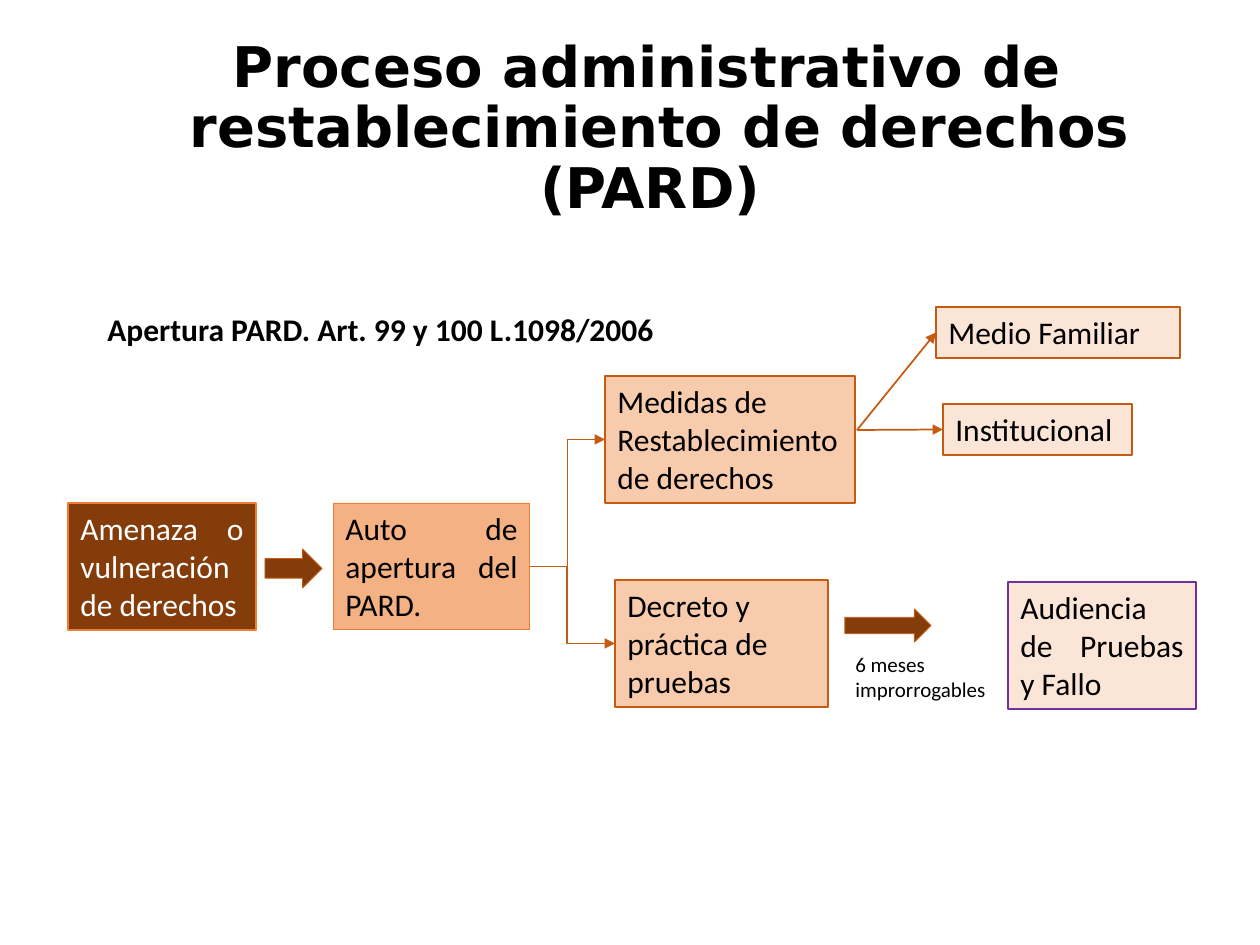
from dataclasses import dataclass

from lxml import etree
from pptx import Presentation
from pptx.dml.color import RGBColor
from pptx.enum.shapes import MSO_CONNECTOR, MSO_SHAPE
from pptx.enum.text import MSO_ANCHOR, PP_ALIGN
from pptx.oxml.ns import qn
from pptx.util import Pt

PX = 914400 / 126
RECT, ARROW = MSO_SHAPE.RECTANGLE, MSO_SHAPE.RIGHT_ARROW
STRAIGHT, ELBOW = MSO_CONNECTOR.STRAIGHT, MSO_CONNECTOR.ELBOW
LEFT, CENTER, JUSTIFY = PP_ALIGN.LEFT, PP_ALIGN.CENTER, PP_ALIGN.JUSTIFY
LEFT_SIDE, RIGHT_SIDE = 1, 3


@dataclass(frozen=True)
class Theme:
    body_font: str = "Calibri"
    title_font: str = "DejaVu Sans"
    title: int = 32
    body: int = 18
    note: int = 12
    black: str = "000000"
    white: str = "FFFFFF"
    brown: str = "843C0B"
    orange: str = "ED7D31"
    rust: str = "C55A11"
    tan: str = "F4B183"
    peach: str = "F8CBAD"
    cream: str = "FBE5D6"
    purple: str = "7030A0"
    thin: float = 0.5
    line: float = 1


THEME = Theme()

TITLE = "Proceso administrativo de restablecimiento de derechos (PARD) "
HEADING = "Apertura PARD. Art. 99 y 100 L.1098/2006"
DEADLINE = "6 meses\nimprorrogables"

# name: (text, (left, top, width, height), fill, line, line width, text colour, alignment)
STEPS = {
    "threat": ("Amenaza o vulneración de derechos", (68, 503, 188, 127),
               THEME.brown, THEME.orange, THEME.line, THEME.white, JUSTIFY),
    "opening": ("Auto de apertura del PARD.", (333, 503, 197, 127),
                THEME.tan, THEME.orange, THEME.thin, THEME.black, JUSTIFY),
    "measures": ("Medidas de Restablecimiento de derechos", (605, 376, 250, 127),
                 THEME.peach, THEME.rust, THEME.line, THEME.black, LEFT),
    "evidence": ("Decreto y práctica de pruebas", (615, 580, 213, 127),
                 THEME.peach, THEME.rust, THEME.line, THEME.black, LEFT),
    "institution": ("Institucional", (943, 404, 189, 51),
                    THEME.cream, THEME.rust, THEME.line, THEME.black, JUSTIFY),
    "family": ("Medio Familiar", (936, 307, 244, 51),
               THEME.cream, THEME.rust, THEME.line, THEME.black, JUSTIFY),
    "hearing": ("Audiencia de Pruebas y Fallo", (1008, 582, 188, 127),
                THEME.cream, THEME.purple, THEME.line, THEME.black, JUSTIFY),
}
BLOCK_ARROWS = [(265, 549, 57, 39), (845, 609, 86, 33)]
FORK = (857, 430)
BRANCH = (567, 566)


def px(value):
    return round(value * PX)


def rgb(code):
    return RGBColor.from_string(code)


def write(box, text, size, color=THEME.black, align=LEFT, bold=False, font=THEME.body_font):
    frame = box.text_frame
    frame.word_wrap = True
    frame.text = text
    for para in frame.paragraphs:
        para.alignment = align
        for span in para.runs:
            span.font.name = font
            span.font.size = Pt(size)
            span.font.bold = bold
            span.font.color.rgb = rgb(color)
    return frame


def add_label(page, place, text, size, **style):
    box = page.shapes.add_textbox(*map(px, place))
    return write(box, text, size, **style)


def add_block(page, kind, place, fill, line, width):
    block = page.shapes.add_shape(kind, *map(px, place))
    block.shadow.inherit = False
    block.fill.solid()
    block.fill.fore_color.rgb = rgb(fill)
    block.line.color.rgb = rgb(line)
    block.line.width = Pt(width)
    return block


def add_link(page, kind, start, target):
    """Draw an arrow from a point to the middle of the target's left side."""
    link = page.shapes.add_connector(kind, *map(px, start), 0, 0)
    link.end_connect(target, LEFT_SIDE)
    link.line.color.rgb = rgb(THEME.rust)
    link.line.width = Pt(THEME.line)
    etree.SubElement(link.line._get_or_add_ln(), qn("a:tailEnd"), type="triangle")
    etree.SubElement(link._element.spPr, qn("a:effectLst"))
    return link


def make_single_bend(link):
    """Turn an elbow into one that runs down first and then right."""
    left, top, width, height = link.left, link.top, link.width, link.height
    link.left = left + (width - height) // 2
    link.top = top + (height - width) // 2
    link.width, link.height = height, width
    properties = link._element.spPr
    properties.find(qn("a:prstGeom")).set("prst", "bentConnector2")
    transform = properties.find(qn("a:xfrm"))
    transform.set("rot", str(270 * 60000))
    transform.set("flipH", "1")


def main():
    deck = Presentation()
    deck.slide_width, deck.slide_height = px(1260), px(945)
    page = deck.slides.add_slide(deck.slide_layouts[6])

    steps = {}
    for name, (text, place, fill, line, width, color, align) in STEPS.items():
        steps[name] = add_block(page, RECT, place, fill, line, width)
        frame = write(steps[name], text, THEME.body, color, align)
        frame.vertical_anchor = MSO_ANCHOR.TOP

    for place in BLOCK_ARROWS:
        add_block(page, ARROW, place, THEME.brown, THEME.rust, THEME.thin)

    for name in ("institution", "family"):
        add_link(page, STRAIGHT, FORK, steps[name])
    make_single_bend(add_link(page, ELBOW, BRANCH, steps["evidence"]))
    opening_link = add_link(page, ELBOW, BRANCH, steps["measures"])
    opening_link.begin_connect(steps["opening"], RIGHT_SIDE)

    add_label(page, (95, 304, 805, 50), HEADING, THEME.body, bold=True)
    add_label(page, (843, 645, 166, 63), DEADLINE, THEME.note)

    frame = add_label(page, (87, 38, 1121, 183), TITLE, THEME.title,
                      align=CENTER, bold=True, font=THEME.title_font)
    frame.vertical_anchor = MSO_ANCHOR.MIDDLE
    para = frame.paragraphs[0]
    para.line_spacing = 0.9
    indent = px(25)
    margins = para._p.get_or_add_pPr()
    margins.set("marL", str(indent))
    margins.set("indent", str(-indent))

    deck.save("out.pptx")


if __name__ == "__main__":
    main()
